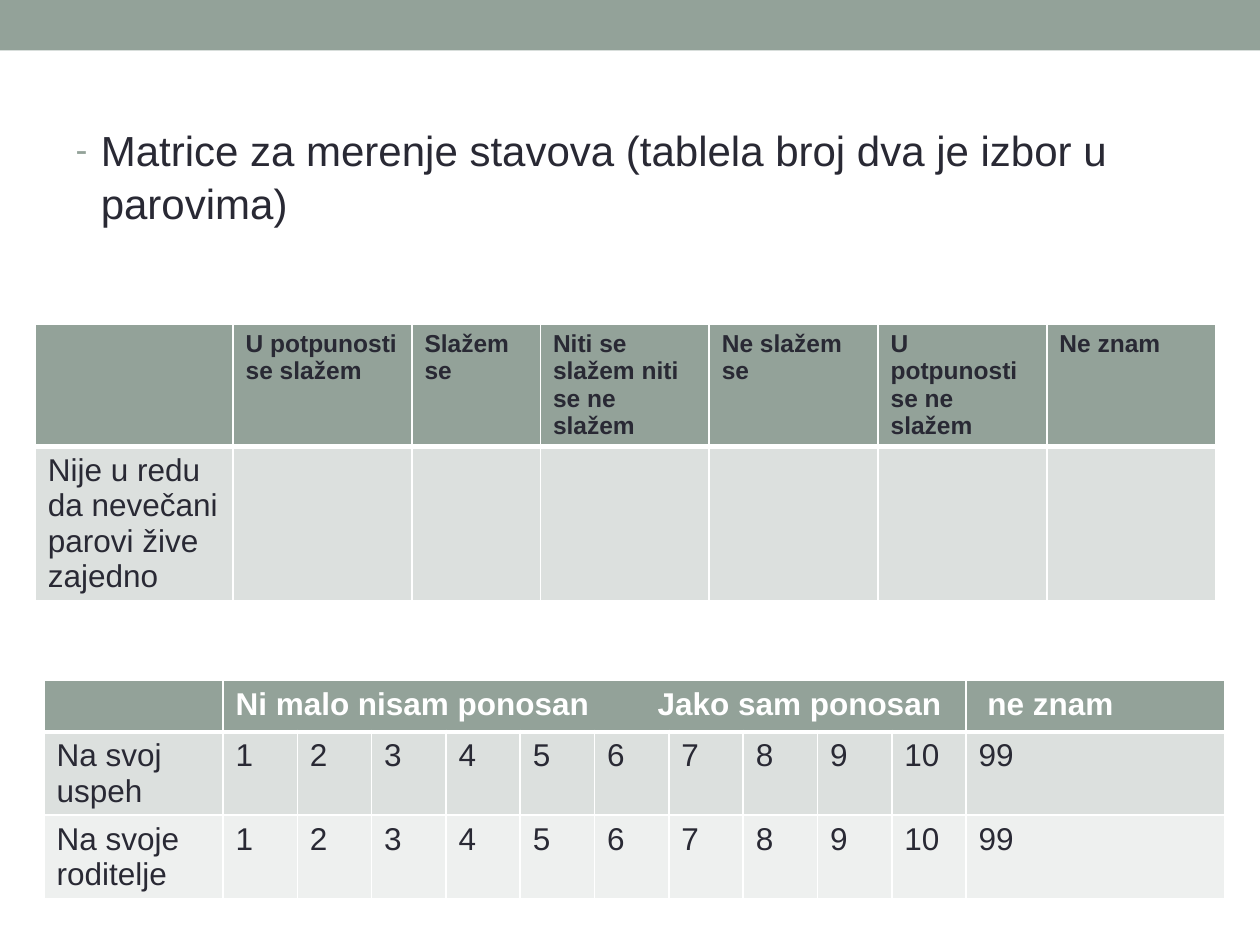
import pptx
import pptx.dml.color
import pptx.enum.shapes
import pptx.oxml
import pptx.oxml.ns
import pptx.util
from pptx.util import Inches

THEME = {
    "font": "Arial",
    "accent": "93A299",
    "dark": "292934",
    "white": "FFFFFF",
    "bands": ["DCE0DE", "EEF0EF"],
    "heading_size": 24,
    "table_size": 18,
    "small_size": 14,
}

HEADING = "Matrice za merenje stavova (tablela broj dva je izbor u parovima)"
SCALE = [str(number) for number in range(1, 11)] + ["99"]

AGREEMENT = {
    "at": (0.28, 2.57),
    "columns": [1.57, 1.42, 1.02] + [1.34] * 4,
    "rows": [0.97, 1.21],
    "header_color": THEME["dark"],
    "header_size": THEME["small_size"],
    "cells": [
        ["", "U potpunosti se slažem", "Slažem se", "Niti se slažem niti se ne slažem",
         "Ne slažem se", "U potpunosti se ne slažem", "Ne znam"],
        ["Nije u redu da nevečani parovi žive zajedno"] + [""] * 6,
    ],
}
PRIDE = {
    "at": (0.35, 5.4),
    "columns": [1.42] + [0.59] * 10 + [2.05],
    "rows": [0.41, 0.66, 0.66],
    "header_color": THEME["white"],
    "header_size": THEME["table_size"],
    "header_span": (1, 10),
    "header_tab": 3.35,
    "cells": [
        ["", "Ni malo nisam ponosan\tJako sam ponosan"] + [""] * 9 + [" ne znam"],
        ["Na svoj uspeh"] + SCALE,
        ["Na svoje roditelje"] + SCALE,
    ],
}


def rgb(color):
    return pptx.dml.color.RGBColor.from_string(color)


def xml(source):
    namespace = pptx.oxml.ns.nsdecls("a")
    return pptx.oxml.parse_xml(source.replace(">", f" {namespace}>", 1))


def style_text(paragraph, size, color, bold=False):
    for run in paragraph.runs:
        run.font.name = THEME["font"]
        run.font.size = pptx.util.Pt(size)
        run.font.bold = bold
        run.font.color.rgb = rgb(color)


def set_borders(cell, top, bottom):
    properties = cell._tc.get_or_add_tcPr()
    for index, (side, width) in enumerate(zip("LRTB", (1, 1, top, bottom))):
        properties.insert(index, xml(
            f'<a:ln{side}><a:solidFill><a:srgbClr val="{THEME["white"]}"/></a:solidFill></a:ln{side}>'))
        properties[index].set("w", str(pptx.util.Pt(width)))


def add_matrix(slide, matrix):
    columns, rows = matrix["columns"], matrix["rows"]
    left, top = matrix["at"]
    table = slide.shapes.add_table(len(rows), len(columns), Inches(left), Inches(top),
                                   Inches(sum(columns)), Inches(sum(rows))).table
    for column, width in zip(table.columns, columns):
        column.width = Inches(width)
    for row, height in zip(table.rows, rows):
        row.height = Inches(height)

    for r, texts in enumerate(matrix["cells"]):
        header = r == 0
        fill = THEME["accent"] if header else THEME["bands"][(r - 1) % 2]
        size = matrix["header_size"] if header else THEME["table_size"]
        color = matrix["header_color"] if header else THEME["dark"]
        for c, text in enumerate(texts):
            cell = table.cell(r, c)
            set_borders(cell, 3 if r == 1 else 1, 3 if header else 1)
            cell.fill.solid()
            cell.fill.fore_color.rgb = rgb(fill)
            if text:
                cell.text_frame.text = text
                style_text(cell.text_frame.paragraphs[0], size, color, header)

    if "header_span" in matrix:
        first, last = matrix["header_span"]
        scale_header = table.cell(0, first)
        scale_header.merge(table.cell(0, last))
        position = Inches(matrix["header_tab"])
        scale_header.text_frame.paragraphs[0]._p.get_or_add_pPr().append(
            xml(f'<a:tabLst><a:tab pos="{position}" algn="l"/></a:tabLst>'))


def add_heading(slide):
    heading = slide.placeholders[1]
    heading.left, heading.top = Inches(0.5), Inches(0.92)
    heading.width, heading.height = Inches(9), Inches(6.17)
    heading.text_frame.text = HEADING
    paragraph = heading.text_frame.paragraphs[0]
    paragraph.line_spacing = 1.05
    style_text(paragraph, THEME["heading_size"], THEME["dark"])
    properties = paragraph._p.get_or_add_pPr()
    properties.set("marL", str(Inches(0.2)))
    properties.set("indent", str(Inches(-0.2)))
    for bullet in (
        f'<a:buClr><a:srgbClr val="{THEME["accent"]}"/></a:buClr>',
        '<a:buSzPct val="85000"></a:buSzPct>',
        f'<a:buFont typeface="{THEME["font"]}"></a:buFont>',
        '<a:buChar char="-"></a:buChar>',
    ):
        properties.append(xml(bullet))


def add_top_band(slide):
    band = slide.shapes.add_shape(pptx.enum.shapes.MSO_SHAPE.RECTANGLE, 0, 0, Inches(10), Inches(0.4))
    band.shadow.inherit = False
    band.fill.solid()
    band.fill.fore_color.rgb = rgb(THEME["accent"])
    band.line.fill.background()


def main():
    presentation = pptx.Presentation()
    presentation.slide_width, presentation.slide_height = Inches(10), Inches(7.5)
    slide = presentation.slides.add_slide(presentation.slide_layouts[1])
    empty_title = slide.shapes.title.element
    empty_title.getparent().remove(empty_title)
    add_top_band(slide)
    add_heading(slide)
    for matrix in (AGREEMENT, PRIDE):
        add_matrix(slide, matrix)
    presentation.save("out.pptx")


if __name__ == "__main__":
    main()
